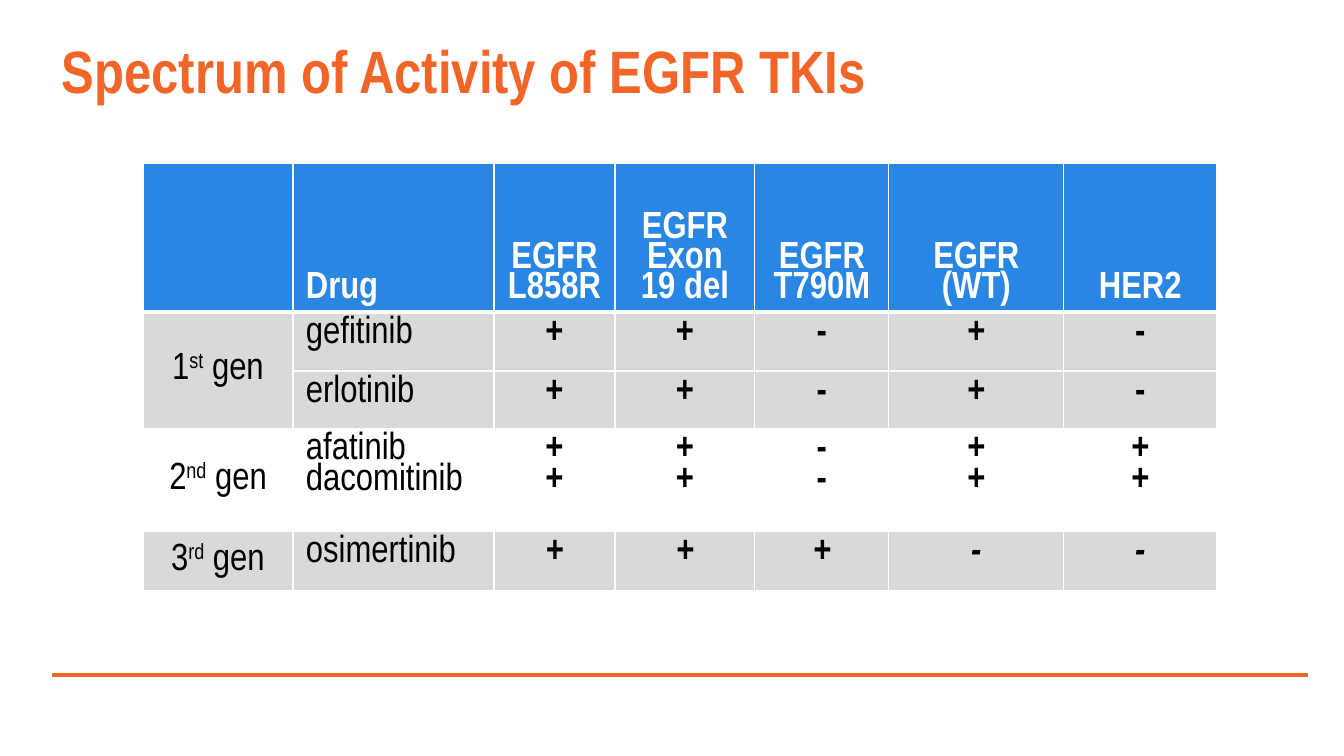
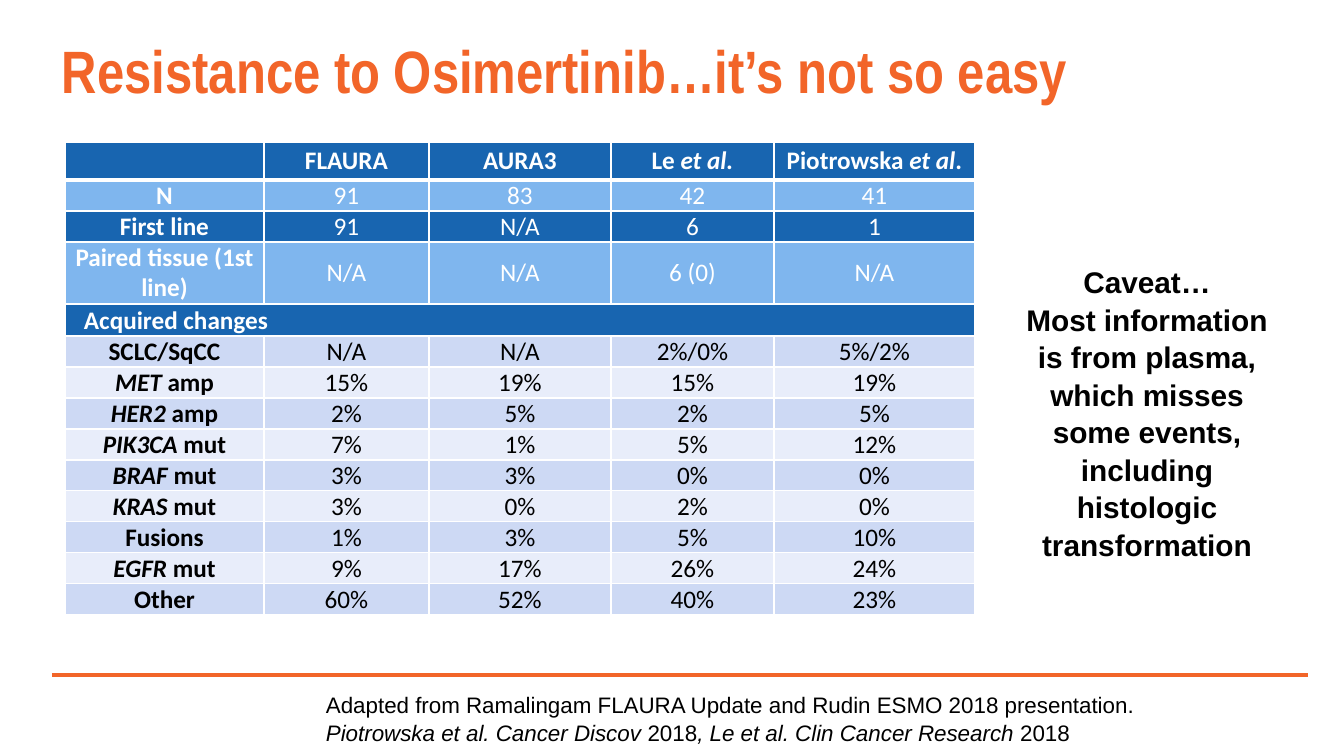
from dataclasses import dataclass
from typing import NamedTuple

from lxml.etree import SubElement
from pptx import Presentation
from pptx.dml.color import RGBColor
from pptx.enum.shapes import MSO_CONNECTOR
from pptx.enum.text import MSO_ANCHOR, PP_ALIGN
from pptx.oxml.ns import qn
from pptx.util import Emu, Pt

SCALE = 914400 / 100.8


@dataclass(frozen=True)
class Theme:
    accent: str = "F26529"
    white: str = "FFFFFF"
    black: str = "000000"
    head: str = "2986E2"
    gray: str = "D9D9D9"
    deep: str = "1865B0"
    sky: str = "7FB6EE"
    pale: str = "CDD9F4"
    faint: str = "E8EDFA"
    narrow: str = "Arial Narrow"
    plain: str = "Arial"
    grid: str = "Calibri"
    title: float = 42.7
    drug: float = 27
    data: float = 18
    side: float = 21.3
    note: float = 16
    rule: float = 2.25


THEME = Theme()


class Run(NamedTuple):
    text: str
    bold: bool = False
    ital: bool = False
    sup: bool = False


Lines = list[list[Run]]


class Face(NamedTuple):
    font: str
    size: float
    color: str
    space: float = 1


class Area(NamedTuple):
    left: int
    top: int
    width: int
    height: int


class Pads(NamedTuple):
    left: int
    top: int
    right: int
    low: int


class Cell(NamedTuple):
    lines: Lines
    face: Face
    fill: str | None
    pads: Pads
    align: PP_ALIGN = PP_ALIGN.CENTER
    anchor: MSO_ANCHOR = MSO_ANCHOR.MIDDLE
    low: int = 1


def px(count: int) -> Emu:
    return Emu(round(count * SCALE))


def rgb(color: str) -> RGBColor:
    return RGBColor.from_string(color)


def write(frame, lines: Lines, face: Face, align: PP_ALIGN) -> None:
    for at, line in enumerate(lines):
        para = frame.paragraphs[0] if at == 0 else frame.add_paragraph()
        para.alignment = align
        para.line_spacing = face.space
        for part in line:
            run = para.add_run()
            run.text = part.text
            font = run.font
            font.name, font.size = face.font, Pt(face.size)
            font.bold, font.italic = part.bold, part.ital
            font.color.rgb = rgb(face.color)
            if part.sup:
                run._r.get_or_add_rPr().set("baseline", "30000")


def add_text(slide, area: Area, lines: Lines, face: Face,
             align: PP_ALIGN = PP_ALIGN.LEFT,
             anchor: MSO_ANCHOR = MSO_ANCHOR.TOP) -> None:
    frame = slide.shapes.add_textbox(*map(px, area)).text_frame
    frame.word_wrap = True
    frame.vertical_anchor = anchor
    write(frame, lines, face, align)


def add_rule(slide) -> None:
    line = slide.shapes.add_connector(
        MSO_CONNECTOR.STRAIGHT, px(52), px(675), px(1308), px(675))
    line.line.color.rgb = rgb(THEME.accent)
    line.line.width = Pt(THEME.rule)
    SubElement(line._element.spPr, qn("a:effectLst"))


def add_slide(deck, title: str):
    slide = deck.slides.add_slide(deck.slide_layouts[6])
    add_rule(slide)
    face = Face(THEME.narrow, THEME.title, THEME.accent)
    add_text(slide, Area(52, 10, 1256, 119), [[Run(title, True)]], face,
             anchor=MSO_ANCHOR.MIDDLE)
    return slide


def add_edge(props, side: str, width: int) -> None:
    edge = SubElement(props, qn(f"a:ln{side}"), w=str(Pt(width)))
    fill = SubElement(edge, qn("a:solidFill"))
    SubElement(fill, qn("a:srgbClr"), val=THEME.white)


def fill_cell(cell, item: Cell, top: int) -> None:
    props = cell._tc.get_or_add_tcPr()
    for side, width in (("L", 1), ("R", 1), ("T", top), ("B", item.low)):
        add_edge(props, side, width)
    if item.fill:
        cell.fill.solid()
        cell.fill.fore_color.rgb = rgb(item.fill)
    else:
        cell.fill.background()
    cell.margin_left, cell.margin_top = px(item.pads.left), px(item.pads.top)
    cell.margin_right, cell.margin_bottom = px(item.pads.right), px(item.pads.low)
    cell.vertical_anchor = item.anchor
    write(cell.text_frame, item.lines, item.face, item.align)


def add_grid(slide, left: int, top: int, cols: list[int], rows: list[int],
             cells: list[list[Cell]]):
    area = Area(left, top, sum(cols), sum(rows))
    table = slide.shapes.add_table(len(rows), len(cols), *map(px, area)).table
    table.horz_banding = False
    for col, width in zip(table.columns, cols):
        col.width = px(width)
    for row, height in zip(table.rows, rows):
        row.height = px(height)
    for y, items in enumerate(cells):
        for x, item in enumerate(items):
            edge = cells[y - 1][x].low if y else 1
            fill_cell(table.cell(y, x), item, edge)
    return table


def drug_slide(deck) -> None:
    slide = add_slide(deck, "Spectrum of Activity of EGFR TKIs")
    pads = Pads(13, 7, 13, 7)
    light = Face(THEME.narrow, THEME.drug, THEME.white, 0.85)
    dark = light._replace(color=THEME.black)
    heads = ["", "Drug", "EGFR L858R", "EGFR Exon 19 del", "EGFR T790M",
             "EGFR\n(WT)", "HER2"]
    cells = [[
        Cell([[Run(line, True)] for line in head.split("\n")] if head else [],
             light, THEME.head, pads,
             PP_ALIGN.LEFT if head == "Drug" else PP_ALIGN.CENTER,
             MSO_ANCHOR.BOTTOM, 3)
        for head in heads]]
    body = [
        ("1st", ["gefitinib"], ["++-+-"], THEME.gray),
        ("", ["erlotinib"], ["++-+-"], THEME.gray),
        ("2nd", ["afatinib", "dacomitinib"], ["++-++", "++-++"], None),
        ("3rd", ["osimertinib"], ["+++--"], THEME.gray),
    ]
    for rank, drugs, signs, fill in body:
        label = [[Run(rank[0]), Run(rank[1:], sup=True), Run(" gen")]] if rank else []
        row = [Cell(label, dark, fill, pads),
               Cell([[Run(drug)] for drug in drugs], dark, fill, pads,
                    PP_ALIGN.LEFT, MSO_ANCHOR.TOP)]
        for marks in zip(*signs):
            lines = [[Run(mark, True, rank == "3rd")] for mark in marks]
            row.append(Cell(lines, dark, fill, pads, anchor=MSO_ANCHOR.TOP))
        cells.append(row)
    table = add_grid(slide, 143, 163, [150, 201, 121, 140, 134, 175, 153],
                     [149, 59, 58, 103, 59], cells)
    table.cell(1, 0).merge(table.cell(2, 0))


def data_slide(deck) -> None:
    slide = add_slide(deck, "Resistance to Osimertinib…it’s not so easy")
    note = Face(THEME.plain, THEME.note, THEME.black, 1.05)
    add_text(slide, Area(316, 685, 852, 65), [
        [Run("Adapted from Ramalingam FLAURA Update and Rudin ESMO 2018 presentation.")],
        [Run("Piotrowska et al. Cancer Discov ", ital=True), Run("2018"),
         Run(", Le et al. Clin Cancer Research ", ital=True), Run("2018")],
    ], note)
    pads = Pads(1, 0, 1, 0)
    light = Face(THEME.grid, THEME.data, THEME.white)
    dark = light._replace(color=THEME.black)
    heads = [
        [],
        [Run("FLAURA", True)],
        [Run("AURA3", True)],
        [Run("Le ", True), Run("et al.", True, True)],
        [Run("Piotrowska ", True), Run("et al", True, True), Run(".", True)],
    ]
    cells = [[Cell([head], light, THEME.deep, pads, low=3) for head in heads]]
    body = [
        ("", "N", "91 83 42 41"),
        ("", "First line", "91 N/A 6 1"),
        ("", "Paired tissue (1st line)", "N/A N/A 6_(0) N/A"),
        ("", "Acquired changes", ""),
        ("", "SCLC/SqCC", "N/A N/A 2%/0% 5%/2%"),
        ("MET", " amp", "15% 19% 15% 19%"),
        ("HER2", " amp", "2% 5% 2% 5%"),
        ("PIK3CA", " mut", "7% 1% 5% 12%"),
        ("BRAF", " mut", "3% 3% 0% 0%"),
        ("KRAS", " mut", "3% 0% 2% 0%"),
        ("", "Fusions", "1% 3% 5% 10%"),
        ("EGFR", " mut", "9% 17% 26% 24%"),
        ("", "Other", "60% 52% 40% 23%"),
    ]
    band = 4
    for at, (gene, label, data) in enumerate(body, 1):
        face = light if at <= band else dark
        tints = (THEME.deep, THEME.sky) if at <= band else (THEME.faint, THEME.pale)
        fill = tints[at % 2]
        name = [Run(gene, True, True)] if gene else []
        row = [Cell([name + [Run(label, True)]], face, fill, pads)]
        if at == band:
            row[0] = row[0]._replace(pads=Pads(19, 1, 1, 0), align=PP_ALIGN.LEFT)
            row += [Cell([], face, fill, pads)] * 4
        row += [Cell([[Run(value.replace("_", " "))]], face, fill, pads)
                for value in data.split()]
        cells.append(row)
    table = add_grid(slide, 65, 142, [199, 165, 182, 163, 201],
                     [38, 31, 31, 62, 32] + [31] * 9, cells)
    table.cell(band, 0).merge(table.cell(band, 4))
    side = Face(THEME.plain, THEME.side, THEME.black, 1.05)
    add_text(slide, Area(1014, 257, 266, 299), [
        [Run("Caveat…", True)],
        [Run("Most information is from plasma, which misses some events, "
             "including histologic transformation", True)],
    ], side, PP_ALIGN.CENTER)


def main() -> None:
    deck = Presentation()
    deck.slide_width, deck.slide_height = px(1344), px(756)
    drug_slide(deck)
    data_slide(deck)
    deck.save("out.pptx")


if __name__ == "__main__":
    main()
